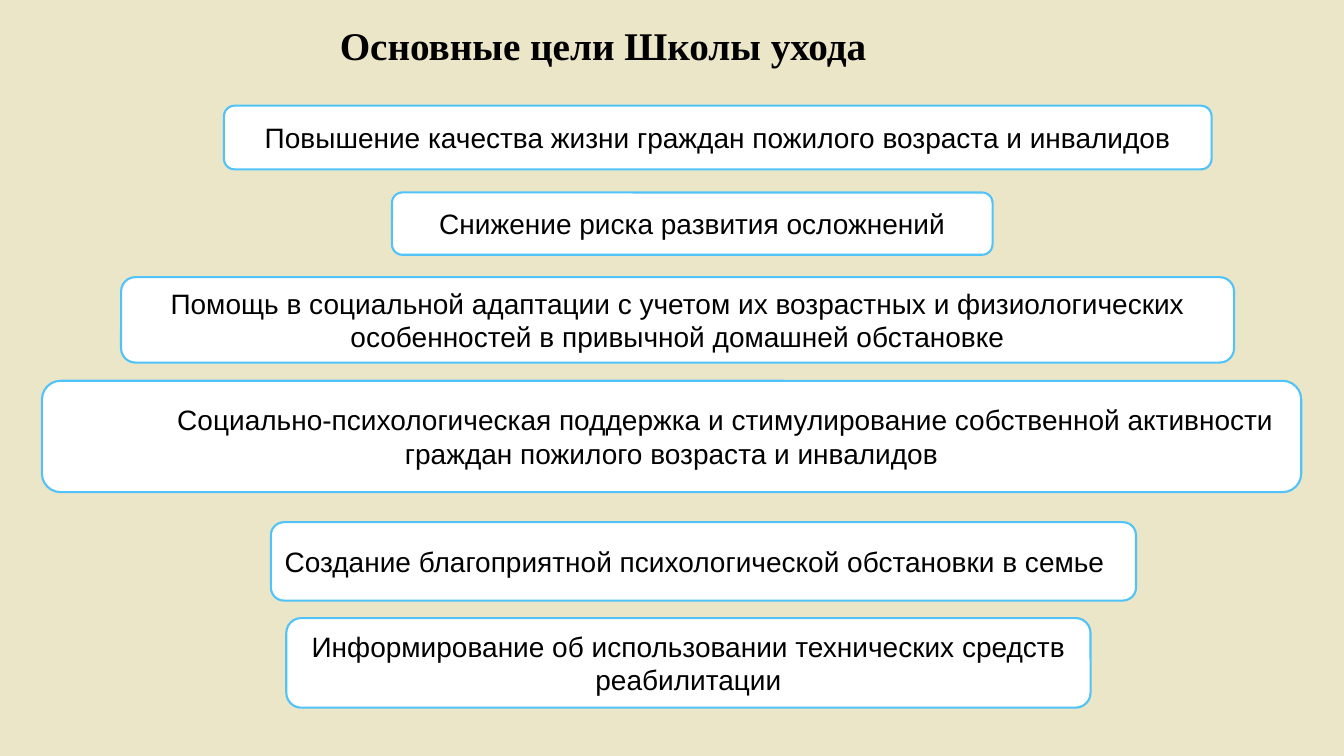
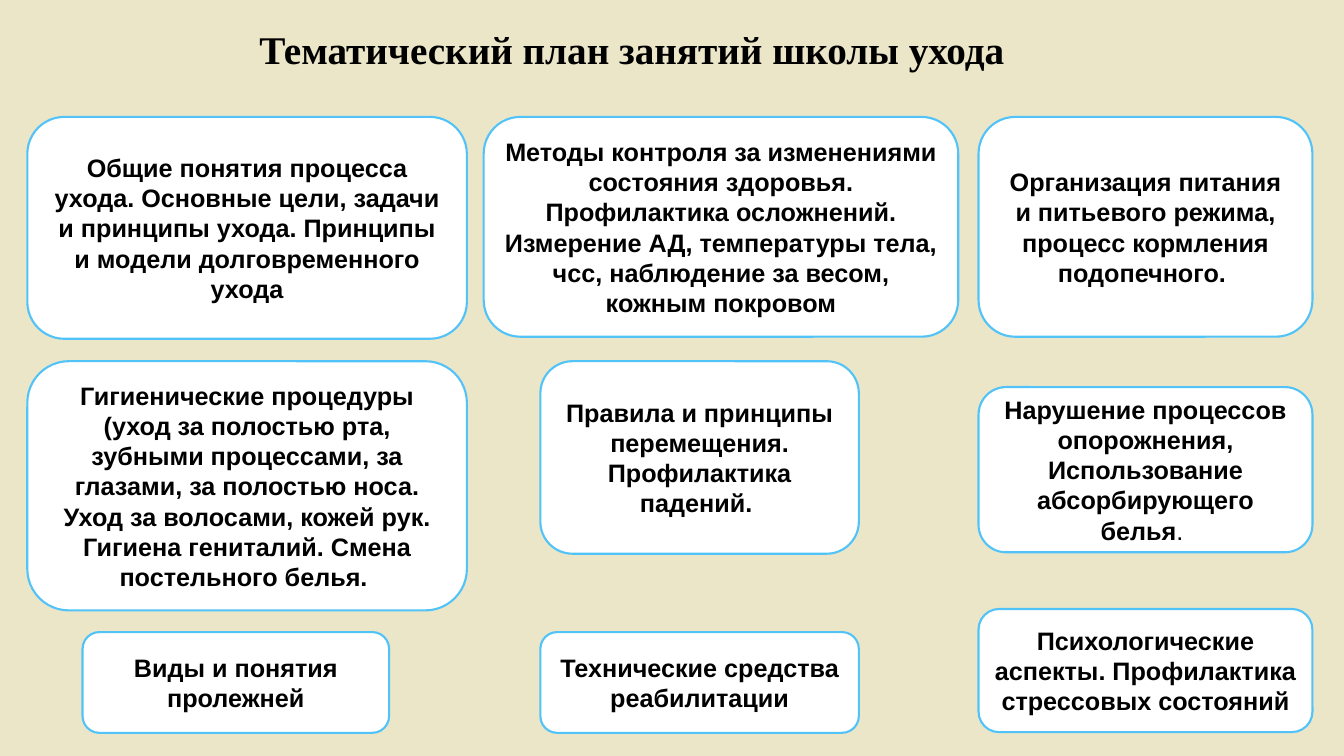
import pptx
import pptx.dml.color
import pptx.enum.shapes
import pptx.enum.text
import pptx.util

Pt = pptx.util.Pt
ALIGN = pptx.enum.text.PP_ALIGN
ANCHOR = pptx.enum.text.MSO_ANCHOR
HUES = {"back": "EBE6C8", "card": "FFFFFF", "edge": "51C3F9", "text": "000000"}
HEAD = {"name": "Times New Roman", "size": Pt(28), "bold": True}
GOAL = {"name": "Arial", "size": Pt(20), "bold": False}
TOPIC = {"name": "Arial", "size": Pt(18), "bold": True}
FRAME = {"word_wrap": True, "auto_size": pptx.enum.text.MSO_AUTO_SIZE.NONE}

GOALS = [
    ((160, 75.5, 705.5, 45.5), "Повышение качества жизни граждан пожилого возраста и инвалидов", {}),
    ((280, 137.5, 429, 44.5), "Снижение риска развития осложнений", {}),
    ((86.5, 198, 795, 61), "Помощь в социальной адаптации с учетом их возрастных и физиологических "
     "особенностей в привычной домашней обстановке", {}),
    ((30, 272, 899.5, 79.5), "Социально-психологическая поддержка и стимулирование собственной активности "
     "граждан пожилого возраста и инвалидов", {"dent": 77}),
    ((193.5, 373, 618, 56), "Создание благоприятной психологической обстановки в семье", {"align": ALIGN.LEFT}),
    ((204.5, 441.5, 574.5, 64), "Информирование об использовании технических средств реабилитации", {}),
]

LEFT, WIDE, RIGHT = (19.5, 314), (345.5, 339), (699, 238.5)
MID, LOW = (386, 227.5), (59, 219)
TOPICS = [
    (LEFT, (83.5, 158.5), "Общие понятия процесса ухода. Основные цели, задачи и принципы ухода. "
     "Принципы и модели долговременного ухода", ""),
    (WIDE, (83.5, 157), "Методы контроля за изменениями состояния здоровья. Профилактика осложнений. "
     "Измерение АД, температуры тела, чсс, наблюдение за весом, кожным покровом", ""),
    (RIGHT, (83.5, 157), "Организация питания и питьевого режима, процесс кормления подопечного. ", ""),
    (LEFT, (258, 178), "Гигиенические процедуры (уход за полостью рта, зубными процессами, за глазами, "
     "за полостью носа. Уход за волосами, кожей рук. Гигиена гениталий. Смена постельного белья. ", ""),
    (RIGHT, (276.5, 118), "Нарушение процессов опорожнения, Использование абсорбирующего белья", ". "),
    (MID, (258, 137.5), "Правила и принципы перемещения. Профилактика падений. ", ""),
    (LOW, (451.5, 72), "Виды и понятия пролежней", ""),
    (MID, (451.5, 72), "Технические средства реабилитации", ""),
    (RIGHT, (435, 88), "Психологические аспекты. Профилактика стрессовых состояний", ""),
]


def style(item, form):
    for key, value in form.items():
        setattr(item, key, value)


def paint(fill, hue):
    fill.solid()
    fill.fore_color.rgb = pptx.dml.color.RGBColor.from_string(HUES[hue])


def write(para, text, form):
    run = para.add_run()
    run.text = text
    style(run.font, form)
    paint(run.font.fill, "text")


def title(slide, box, text):
    shape = slide.shapes.title
    style(shape, dict(zip(("left", "top", "width", "height"), map(Pt, box))))
    style(shape.text_frame, {**FRAME, "vertical_anchor": ANCHOR.TOP})
    para = shape.text_frame.paragraphs[0]
    para.alignment = ALIGN.LEFT
    write(para, text, HEAD)


def card(slide, box, text, form, tail="", align=ALIGN.CENTER, dent=0):
    kind = pptx.enum.shapes.MSO_SHAPE.ROUNDED_RECTANGLE
    shape = slide.shapes.add_shape(kind, *map(Pt, box))
    shape.shadow.inherit = False
    paint(shape.fill, "card")
    paint(shape.line.fill, "edge")
    shape.line.width = Pt(1.5)
    style(shape.text_frame, {**FRAME, "vertical_anchor": ANCHOR.MIDDLE})
    para = shape.text_frame.paragraphs[0]
    para.alignment = align
    if dent:
        para._p.get_or_add_pPr().set("indent", str(Pt(dent)))
    write(para, text, form)
    if tail:
        write(para, tail, {**form, "bold": False})


def goals(slide):
    title(slide, (235.5, 11.5, 513.5, 41), "Основные цели Школы ухода")
    for box, text, extra in GOALS:
        card(slide, box, text, GOAL, **extra)


def topics(slide):
    title(slide, (178, 14.5, 633.5, 41), "Тематический план занятий школы ухода")
    for (left, width), (top, height), text, tail in TOPICS:
        card(slide, (left, top, width, height), text, TOPIC, tail)


def main():
    deck = pptx.Presentation()
    style(deck, {"slide_width": Pt(960), "slide_height": Pt(540)})
    paint(deck.slide_master.background.fill, "back")
    for build in (goals, topics):
        build(deck.slides.add_slide(deck.slide_layouts[5]))
    deck.save("out.pptx")


if __name__ == "__main__":
    main()
